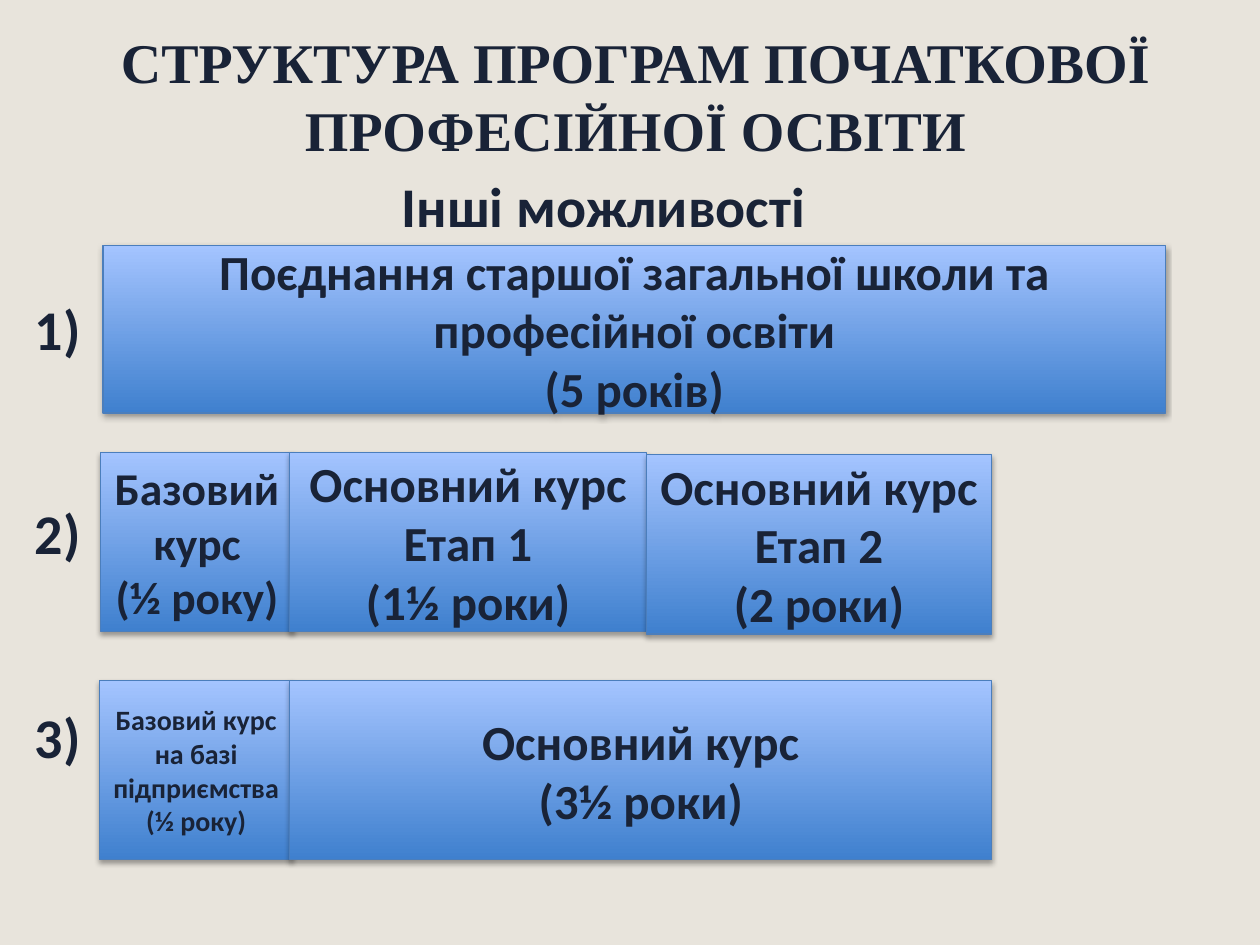
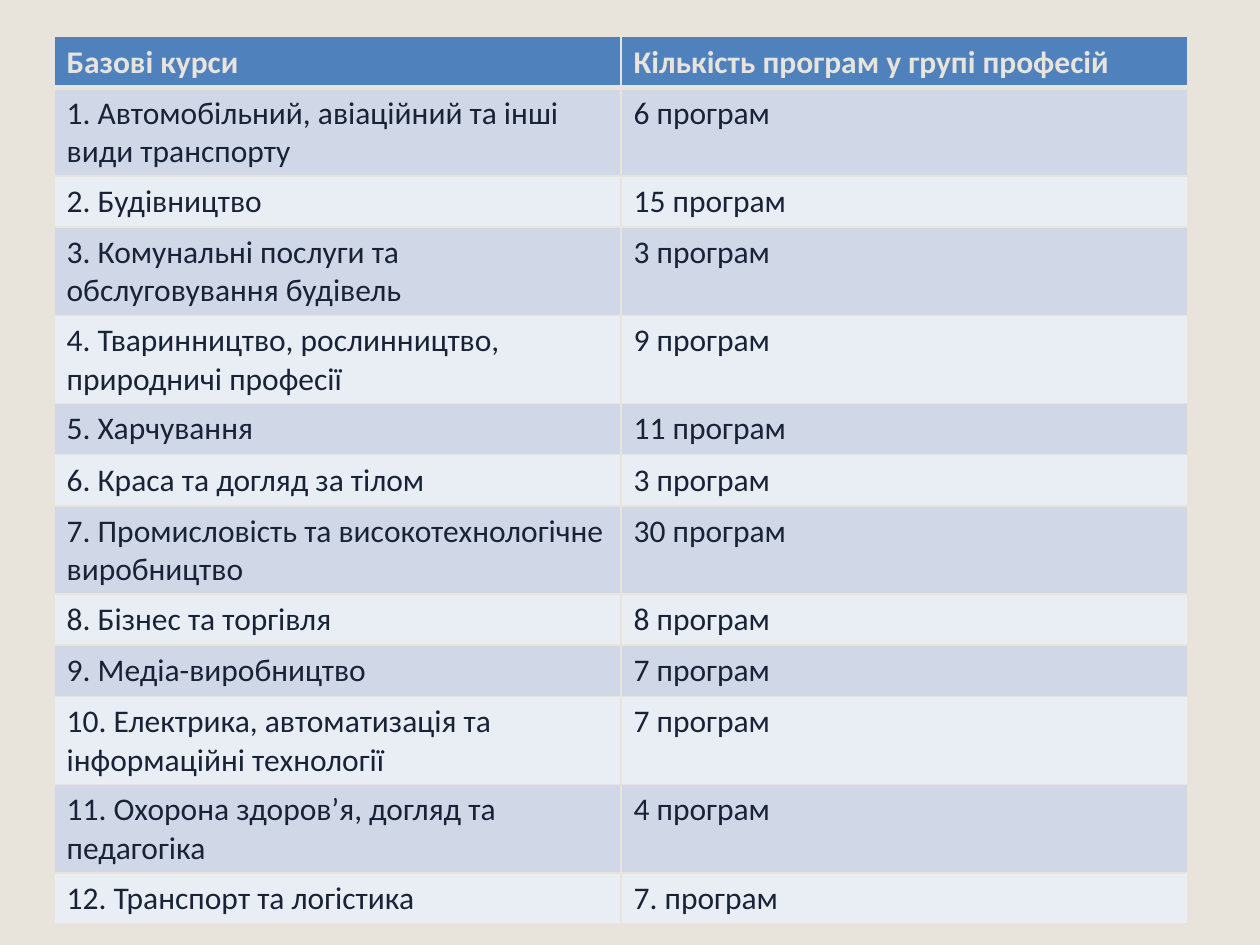
"""Build two slides on the programmes of initial vocational education."""
from dataclasses import dataclass

import lxml.etree
import pptx
import pptx.dml.color
import pptx.enum.shapes
import pptx.enum.text
import pptx.oxml.ns
import pptx.shapes.autoshape
import pptx.slide
import pptx.table
import pptx.text.text
import pptx.util

Cm = pptx.util.Cm
Pt = pptx.util.Pt
Rgb = pptx.dml.color.RGBColor
Align = pptx.enum.text.PP_ALIGN
Anchor = pptx.enum.text.MSO_ANCHOR
qn = pptx.oxml.ns.qn

SAND = Rgb(0xE8, 0xE4, 0xDC)
INK = Rgb(0x19, 0x23, 0x37)
DEEP = Rgb(0x3F, 0x80, 0xCE)
LIGHT = Rgb(0xA4, 0xC4, 0xFF)
EDGE = Rgb(0x4B, 0x7E, 0xBC)
HEAD = Rgb(0x4F, 0x81, 0xBD)
BANDS = (Rgb(0xE9, 0xED, 0xF4), Rgb(0xD0, 0xD8, 0xE8))
SANS = "Calibri"
SERIF = "Times New Roman"


@dataclass(frozen=True)
class Label:
    """Plain text placed on the slide, in centimetres and points."""
    left: float
    top: float
    width: float
    height: float
    lines: tuple[str, ...]
    face: str = SANS
    anchor: Anchor = Anchor.TOP
    gap: float = 0


@dataclass(frozen=True)
class Course:
    """A course box, in centimetres and points."""
    left: float
    top: float
    width: float
    height: float
    lines: tuple[str, ...]
    size: float = 28


@dataclass(frozen=True)
class Group:
    """A group of trades and its count of programmes."""
    name: str
    count: str


LABELS = (
    Label(0.71, 0.33, 24.21, 3.18, ("СТРУКТУРА ПРОГРАМ ПОЧАТКОВОЇ ПРОФЕСІЙНОЇ ОСВІТИ",),
          SERIF, Anchor.MIDDLE),
    Label(5.31, 3.33, 13.72, 1.63, ("Інші можливості",)),
    Label(0.3, 5.82, 1.73, 9.83, ("1)", "2)", "3)"), gap=78),
)

TALL = 3.61
COURSES = (
    Course(2.08, 4.95, 21.41, 3.38,
           ("Поєднання старшої загальної школи та професійної освіти", "(5 років)")),
    Course(2.03, 9.12, 3.89, TALL, ("Базовий курс", "(½ року)"), 26),
    Course(5.84, 9.12, 7.19, TALL, ("Основний курс", "Етап 1", "(1½ роки)")),
    Course(13.03, 9.17, 6.96, TALL, ("Основний курс", "Етап 2", "(2 роки)")),
    Course(2.01, 13.72, 3.89, TALL, ("Базовий курс на базі підприємства", "(½ року)"), 16),
    Course(5.84, 13.72, 14.15, TALL, ("Основний курс", "(3½ роки)")),
)

GROUPS = (
    Group("Базові курси", "Кількість програм у групі професій"),
    Group("1. Автомобільний, авіаційний та інші види транспорту", "6 програм"),
    Group("2. Будівництво", "15 програм"),
    Group("3. Комунальні послуги та обслуговування будівель", "3 програм"),
    Group("4. Тваринництво, рослинництво, природничі професії", "9 програм"),
    Group("5. Харчування", "11 програм"),
    Group("6. Краса та догляд за тілом", "3 програм"),
    Group("7. Промисловість та високотехнологічне виробництво", "30 програм"),
    Group("8. Бізнес та торгівля", "8 програм"),
    Group("9. Медіа-виробництво", "7 програм"),
    Group("10. Електрика, автоматизація та інформаційні технології", "7 програм"),
    Group("11. Охорона здоров’я, догляд та педагогіка", "4 програм"),
    Group("12. Транспорт та логістика", "7. програм"),
)


def write(frame: pptx.text.text.TextFrame, lines: tuple[str, ...], size: float,
          face: str = SANS, tint: Rgb = INK, bold: bool = True,
          align: Align = Align.CENTER, gap: float = 0) -> None:
    """Fill a text frame with one paragraph per line."""
    frame.word_wrap = True
    frame.text = "\n".join(lines)
    for rank, para in enumerate(frame.paragraphs):
        para.alignment = align
        para.space_before = Pt(gap if rank else 0)
        font = para.font
        font.name, font.size, font.bold = face, Pt(size), bold
        font.color.rgb = tint


def cast(shape: pptx.shapes.autoshape.Shape) -> None:
    """Give a shape a soft shadow below it."""
    shape.shadow.inherit = False
    effects = shape._element.spPr.find(qn("a:effectLst"))
    outer = lxml.etree.SubElement(effects, qn("a:outerShdw"), blurRad=str(Pt(3.1)),
                                  dist=str(Pt(1.8)), dir="5400000", rotWithShape="0")
    tint = lxml.etree.SubElement(outer, qn("a:srgbClr"), val="000000")
    lxml.etree.SubElement(tint, qn("a:alpha"), val="35000")


def add_label(slide: pptx.slide.Slide, label: Label) -> None:
    """Place a heading or a column of row numbers."""
    box = slide.shapes.add_textbox(Cm(label.left), Cm(label.top),
                                   Cm(label.width), Cm(label.height))
    box.text_frame.vertical_anchor = label.anchor
    write(box.text_frame, label.lines, 32, label.face, gap=label.gap)


def add_course(slide: pptx.slide.Slide, course: Course) -> None:
    """Draw a course as a shaded box."""
    box = slide.shapes.add_shape(pptx.enum.shapes.MSO_SHAPE.RECTANGLE,
                                 Cm(course.left), Cm(course.top),
                                 Cm(course.width), Cm(course.height))
    box.fill.gradient()
    box.fill.gradient_angle = 90
    for stop, tint in zip(box.fill.gradient_stops, (DEEP, LIGHT)):
        stop.color.rgb = tint
    box.line.color.rgb = EDGE
    box.line.width = Pt(0.75)
    cast(box)
    box.text_frame.vertical_anchor = Anchor.MIDDLE
    write(box.text_frame, course.lines, course.size)


def frame_cell(cell: pptx.table._Cell, row: int) -> None:
    """Rule a cell, with a thick line under the header."""
    props = cell._tc.get_or_add_tcPr()
    thick = {0: "lnB", 1: "lnT"}.get(row)
    for side in ("lnL", "lnR", "lnT", "lnB"):
        width = Pt(3 if side == thick else 1)
        line = lxml.etree.SubElement(props, qn(f"a:{side}"), w=str(width))
        fill = lxml.etree.SubElement(line, qn("a:solidFill"))
        lxml.etree.SubElement(fill, qn("a:srgbClr"), val=str(SAND))


def add_groups(slide: pptx.slide.Slide) -> None:
    """Draw the table of basic courses."""
    high = Cm(1.03)
    table = slide.shapes.add_table(len(GROUPS), 2, Cm(1.09), Cm(0.74),
                                   Cm(22.86), high * len(GROUPS)).table
    for row, group in enumerate(GROUPS):
        table.rows[row].height = high
        first = row == 0
        for col, text in enumerate((group.name, group.count)):
            cell = table.cell(row, col)
            frame_cell(cell, row)
            cell.fill.solid()
            cell.fill.fore_color.rgb = HEAD if first else BANDS[row % 2]
            write(cell.text_frame, (text,), 18, tint=SAND if first else INK,
                  bold=first, align=Align.LEFT)


def main() -> None:
    """Build and save the deck."""
    deck = pptx.Presentation()
    deck.slide_width, deck.slide_height = Cm(25.4), Cm(19.05)
    back = deck.slide_master.background.fill
    back.solid()
    back.fore_color.rgb = SAND
    blank = deck.slide_layouts[6]
    paths = deck.slides.add_slide(blank)
    for course in COURSES:
        add_course(paths, course)
    for label in LABELS:
        add_label(paths, label)
    add_groups(deck.slides.add_slide(blank))
    deck.save("out.pptx")


if __name__ == "__main__":
    main()
